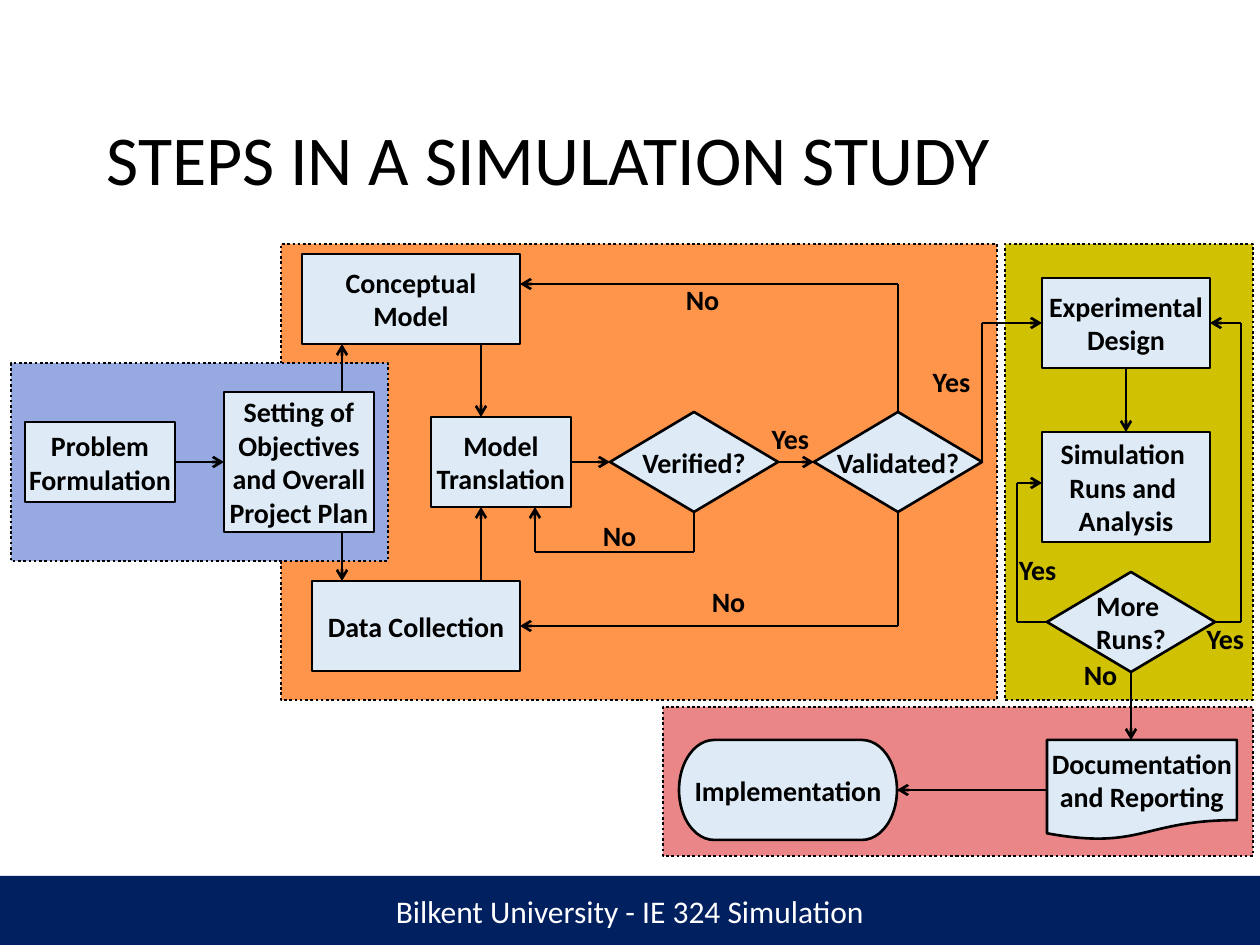
from pptx import Presentation
from pptx.dml.color import RGBColor
from pptx.enum.dml import MSO_LINE as Dash
from pptx.enum.shapes import MSO_CONNECTOR as Conn, MSO_SHAPE as Kind
from pptx.enum.text import MSO_ANCHOR as Anchor, PP_ALIGN as Align
from pptx.util import Pt
from lxml.etree import SubElement
from pptx.oxml.ns import qn

PX = 914400 / 126
INK, PALE, WHITE = "000000", "DEEBF7", "FFFFFF"


def rgb(code):
    return RGBColor.from_string(code)


def write(shape, text, size, color=INK, bold=False, align=Align.CENTER):
    frame = shape.text_frame
    frame.text = text
    for para in frame.paragraphs:
        para.alignment = align
        for run in para.runs:
            font = run.font
            font.name, font.size, font.bold = "Calibri", Pt(size), bold
            font.color.rgb = rgb(color)
    return frame


deck = Presentation()
deck.slide_width, deck.slide_height = round(1260 * PX), round(945 * PX)
slide = deck.slides.add_slide(deck.slide_layouts[6])
shapes = slide.shapes

bar = shapes.add_shape(Kind.RECTANGLE, *[round(v * PX) for v in (0, 876, 1260, 69)])
bar.shadow.inherit = False
bar.fill.solid()
bar.fill.fore_color.rgb = rgb("002060")
bar.line.fill.background()
write(bar, "Bilkent University - IE 324 Simulation", 18, WHITE).vertical_anchor = Anchor.MIDDLE

zones = [
    ("EA8688", 663, 707, 590, 149),
    ("D0C102", 1005, 244, 248, 456),
    ("FF944B", 281, 244, 716, 456),
    ("97A9E1", 11, 363, 377, 198),
]
for color, *rect in zones:
    zone = shapes.add_shape(Kind.RECTANGLE, *[round(v * PX) for v in rect])
    zone.shadow.inherit = False
    zone.fill.solid()
    zone.fill.fore_color.rgb = rgb(color)
    zone.line.color.rgb = rgb(INK)
    zone.line.width = Pt(1.5)
    zone.line.dash_style = Dash.ROUND_DOT

title = shapes.add_textbox(*[round(v * PX) for v in (94, 84, 1101, 158)])
frame = write(title, "STEPS IN A SIMULATION STUDY", 40, align=Align.LEFT)
frame.word_wrap = True
frame.vertical_anchor = Anchor.MIDDLE
frame.paragraphs[0].line_spacing = 0.9

steps = [
    ("problem", Kind.RECTANGLE, 25, 422, 150, 80, "Problem\nFormulation"),
    ("setting", Kind.RECTANGLE, 224, 392, 150, 140,
     "Setting of\nObjectives\nand Overall\nProject Plan"),
    ("concept", Kind.RECTANGLE, 302, 254, 218, 90, "Conceptual\nModel"),
    ("data", Kind.RECTANGLE, 312, 581, 208, 90, "Data Collection"),
    ("model", Kind.RECTANGLE, 431, 417, 140, 90, "Model\nTranslation"),
    ("verify", Kind.DIAMOND, 610, 412, 168, 100, "Verified?"),
    ("valid", Kind.DIAMOND, 814, 412, 168, 100, "Validated?"),
    ("design", Kind.RECTANGLE, 1042, 278, 168, 90, "Experimental\nDesign"),
    ("runs", Kind.RECTANGLE, 1042, 432, 168, 110, "Simulation \nRuns and \nAnalysis"),
    ("more", Kind.DIAMOND, 1047, 572, 168, 100, "More \nRuns?"),
    ("report", Kind.FLOWCHART_DOCUMENT, 1047, 740, 190, 100, "Documentation\nand Reporting"),
    ("finish", Kind.FLOWCHART_TERMINATOR, 679, 740, 218, 100, "Implementation"),
]
nodes = {}
for name, kind, *rect, text in steps:
    node = shapes.add_shape(kind, *[round(v * PX) for v in rect])
    node.shadow.inherit = False
    node.fill.solid()
    node.fill.fore_color.rgb = rgb(PALE)
    node.line.color.rgb = rgb(INK)
    node.line.width = Pt(1.5)
    frame = write(node, text, 16, bold=True)
    frame.word_wrap = False
    frame.vertical_anchor = Anchor.MIDDLE
    nodes[name] = node

routes = [
    (("problem", 3), [(175, 462), (224, 462)], ("setting", 1)),
    (None, [(342, 532), (342, 581)], None),
    (None, [(342, 392), (342, 344)], None),
    (None, [(481, 344), (481, 417)], None),
    (None, [(481, 581), (481, 507)], None),
    (("model", 3), [(571, 462), (610, 462)], ("verify", 1)),
    (("verify", 2), [(694, 512), (694, 552), (535, 552), (535, 507)], None),
    (("verify", 3), [(778, 462), (814, 462)], ("valid", 1)),
    (("valid", 0), [(898, 412), (898, 284), (520, 284)], None),
    (("valid", 2), [(898, 512), (898, 626), (520, 626)], ("data", 3)),
    (("valid", 3), [(982, 462), (982, 323), (1042, 323)], ("design", 1)),
    (("design", 2), [(1126, 368), (1126, 432)], ("runs", 0)),
    (("more", 1), [(1047, 622), (1017, 622), (1017, 483), (1042, 483)], None),
    (("more", 3), [(1215, 622), (1241, 622), (1241, 323), (1210, 323)], ("design", 3)),
    (("more", 2), [(1131, 672), (1131, 740)], None),
    (("report", 1), [(1047, 790), (897, 790)], ("finish", 3)),
]
for start, points, end in routes:
    last = len(points) - 2
    for i, (a, b) in enumerate(zip(points, points[1:])):
        link = shapes.add_connector(Conn.STRAIGHT, *[round(v * PX) for v in a + b])
        link.line.color.rgb = rgb(INK)
        link.line.width = Pt(1.5)
        if i == 0 and start:
            link.begin_connect(nodes[start[0]], start[1])
        if i == last:
            SubElement(link.line._get_or_add_ln(), qn("a:tailEnd"), type="arrow")
            if end:
                link.end_connect(nodes[end[0]], end[1])
        SubElement(link._element.spPr, qn("a:effectLst"))

labels = [
    ("No", 590, 512, 59), ("No", 699, 578, 59), ("No", 673, 276, 59),
    ("No", 1071, 651, 59), ("Yes", 993, 546, 89), ("Yes", 746, 415, 89),
    ("Yes", 907, 358, 89), ("Yes", 1181, 615, 89),
]
for text, x, y, wide in labels:
    label = shapes.add_textbox(*[round(v * PX) for v in (x, y, wide, 47)])
    write(label, text, 16, bold=True).word_wrap = True

deck.save("out.pptx")
